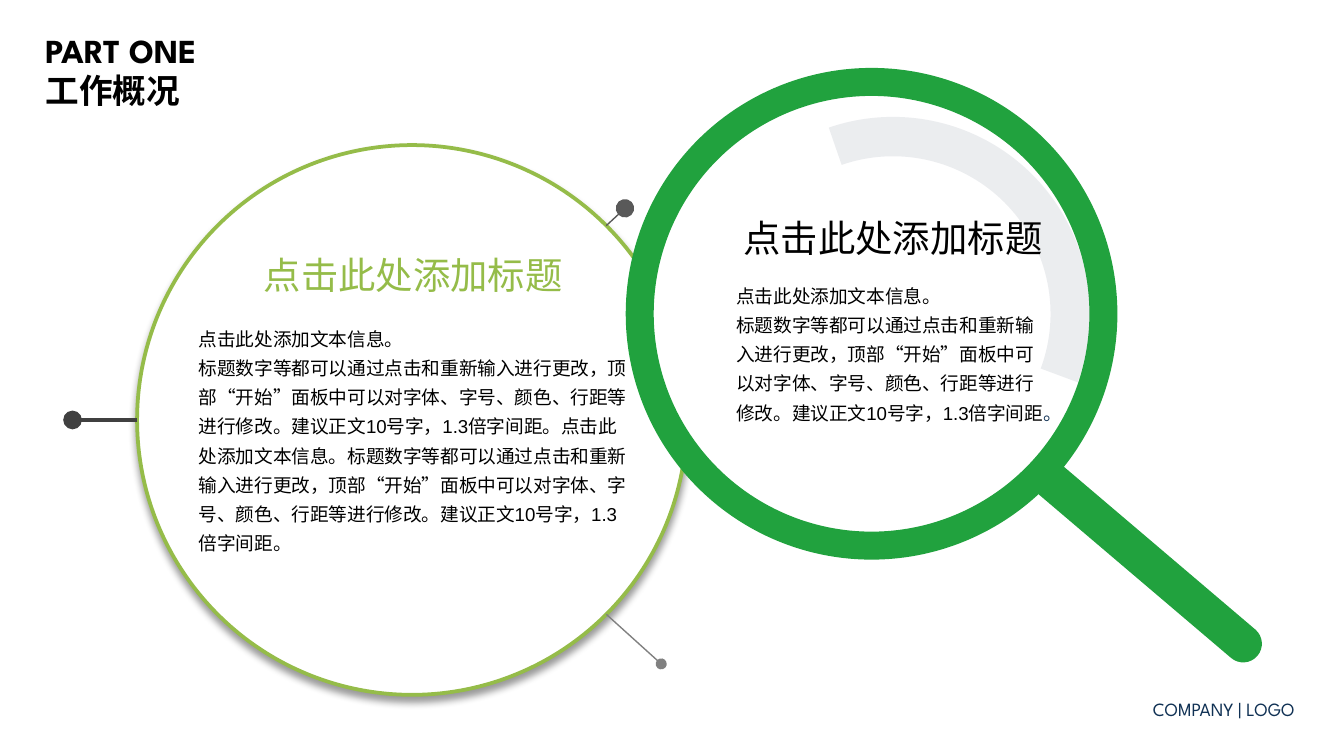
from math import cos, radians, sin

from lxml import etree
from pptx import Presentation
from pptx.dml.color import RGBColor
from pptx.enum.lang import MSO_LANGUAGE_ID
from pptx.enum.shapes import MSO_CONNECTOR, MSO_SHAPE
from pptx.enum.text import MSO_AUTO_SIZE, PP_ALIGN
from pptx.oxml.ns import qn
from pptx.util import Inches, Pt

OVAL, ARC = MSO_SHAPE.OVAL, MSO_SHAPE.BLOCK_ARC
STRAIGHT = MSO_CONNECTOR.STRAIGHT
LEFT, CENTER, RIGHT = PP_ALIGN.LEFT, PP_ALIGN.CENTER, PP_ALIGN.RIGHT
GROW = MSO_AUTO_SIZE.SHAPE_TO_FIT_TEXT
CHINESE = MSO_LANGUAGE_ID.SIMPLIFIED_CHINESE

COLORS = {
    "white": "FFFFFF", "black": "000000", "lime": "95BC49", "green": "21A23E",
    "slate": "44546A", "navy": "103154",
    "grey": "808080", "dark_grey": "595959", "charcoal": "404040",
}
BRAND_FONT, LATIN_FONT, CJK_FONT = "League Spartan", "Arial", "Noto Sans CJK SC"
COLS, ROWS = 100, 56.25  # square grid cells


def add_xml(parent, tag, **attributes):
    return etree.SubElement(parent, qn(tag), attributes)


class SlideBuilder:
    """Draws on one slide; every length is in grid columns and rows."""

    def __init__(self, prs):
        self.slide = prs.slides.add_slide(prs.slide_layouts[6])
        self.cell_w = prs.slide_width / COLS
        self.cell_h = prs.slide_height / ROWS

    def x(self, columns):
        return round(columns * self.cell_w)

    def y(self, rows):
        return round(rows * self.cell_h)

    def color(self, name):
        return RGBColor.from_string(COLORS[name])

    def disc(self, center, radius, fill, line=None, width=0, kind=OVAL, parent=None):
        cx, cy = center
        shape = (parent or self.slide).shapes.add_shape(
            kind, self.x(cx - radius), self.y(cy - radius),
            self.x(2 * radius), self.y(2 * radius))
        shape.shadow.inherit = False
        shape.fill.solid()
        shape.fill.fore_color.rgb = self.color(fill)
        if line:
            shape.line.color.rgb = self.color(line)
            shape.line.width = Pt(width)
        else:
            shape.line.fill.background()
        return shape

    def drop_shadow(self, shape, color, opacity, blur, distance):
        effects = shape._element.spPr.find(qn("a:effectLst"))
        shadow = add_xml(effects, "a:outerShdw", blurRad=str(Pt(blur)), dist=str(Pt(distance)),
                         dir=str(90 * 60000), algn="t", rotWithShape="0")
        tint = add_xml(shadow, "a:srgbClr", val=COLORS[color])
        add_xml(tint, "a:alpha", val=str(opacity * 1000))

    def fade(self, shape, opacity):
        tint = shape._element.spPr.find(qn("a:solidFill")).find(qn("a:srgbClr"))
        add_xml(tint, "a:alpha", val=str(opacity * 1000))

    def line(self, start, end, color, width, dot=None, round_cap=False, parent=None):
        connector = (parent or self.slide).shapes.add_connector(
            STRAIGHT, self.x(start[0]), self.y(start[1]), self.x(end[0]), self.y(end[1]))
        connector.line.color.rgb = self.color(color)
        connector.line.width = Pt(width)
        outline = connector.line._get_or_add_ln()
        if round_cap:
            outline.set("cap", "rnd")
        if dot:
            add_xml(outline, "a:tailEnd", type="oval", w=dot, len=dot)
        add_xml(connector._element.spPr, "a:effectLst")

    def text(self, box, paragraphs, size, color="black", font=LATIN_FONT,
             bold=False, align=LEFT, spacing=1.0):
        """Each paragraph is a list of (text, color) runs or a plain string."""
        left, top, width, height = box
        frame = self.slide.shapes.add_textbox(
            self.x(left), self.y(top), self.x(width), self.y(height)).text_frame
        frame.word_wrap = True
        frame.auto_size = GROW
        for i, content in enumerate(paragraphs):
            paragraph = frame.add_paragraph() if i else frame.paragraphs[0]
            paragraph.alignment = align
            paragraph.line_spacing = spacing
            pieces = [(content, color)] if isinstance(content, str) else content
            for words, run_color in pieces:
                run = paragraph.add_run()
                run.text = words
                run.font.size = Pt(size)
                run.font.bold = bold
                run.font.color.rgb = self.color(run_color)
                run.font.name = font
                run.font.language_id = CHINESE
                add_xml(run.font._element, "a:ea", typeface=CJK_FONT)


def rim(center, radius, degrees):
    angle = radians(degrees)
    return center[0] + radius * cos(angle), center[1] + radius * sin(angle)


def main():
    prs = Presentation()
    prs.slide_width, prs.slide_height = Inches(10), Inches(5.625)
    page = SlideBuilder(prs)

    topic = "点击此处添加标题"
    intro = "点击此处添加文本信息。"
    advice = ("标题数字等都可以通过点击和重新输入进行更改，顶部“开始”面板中可以对字体、"
              "字号、颜色、行距等进行修改。建议正文10号字，1.3倍字间距")

    # Heading
    page.text((2.4, 1.7, 15, 7.1), ["PART ONE", "工作概况"], 18, font=BRAND_FONT, bold=True)

    # Large circle
    circle, circle_radius = (30.65, 31.25), 20.45
    overview = page.disc(circle, circle_radius, "white", "lime", 2)
    page.drop_shadow(overview, "black", opacity=40, blur=4, distance=3)

    # Magnifying glass
    lens = (64.85, 23.35)
    magnifier = page.slide.shapes.add_group_shape()
    page.disc(lens, 17.25, "white", "green", 15, parent=magnifier)
    page.line((77.8, 35.4), (92.5, 47.9), "green", 20, round_cap=True, parent=magnifier)

    # Glare on the lens
    glare = page.disc((66.45, 23.35), 14.65, "slate", kind=ARC)
    for i, value in enumerate((150.58, 12.21, 0.1)):
        glare.adjustments[i] = value
    page.fade(glare, 10)

    # Lens text
    page.text((53.8, 20.2, 25.3, 12), [intro, [(advice, "black"), ("。", "navy")]],
              10, spacing=1.3)
    page.text((53.8, 15.5, 25.3, 4.4), [topic], 20, align=CENTER)

    # Circle text
    page.text((13.8, 18.3, 33.9, 4.4), [topic], 20, "lime", align=CENTER)
    page.text((13.8, 23.4, 33.9, 18.4), [intro, f"{advice}。{intro}{advice}。"],
              10, spacing=1.3)

    # Pins on the circle's rim
    for degrees, tip, color, width, dot in (
            (45, (49.2, 49.4), "grey", 0.75, "med"),
            (-45, (46.5, 15.5), "dark_grey", 0.75, "lg"),
            (180, (5.4, 31.25), "charcoal", 2, "lg")):
        page.line(rim(circle, circle_radius, degrees), tip, color, width, dot)

    # Footer
    page.text((80.8, 50.9, 16.5, 3.1), ["COMPANY | LOGO"], 10, "navy",
              font=BRAND_FONT, align=RIGHT, spacing=1.3)

    prs.save("out.pptx")


if __name__ == "__main__":
    main()
